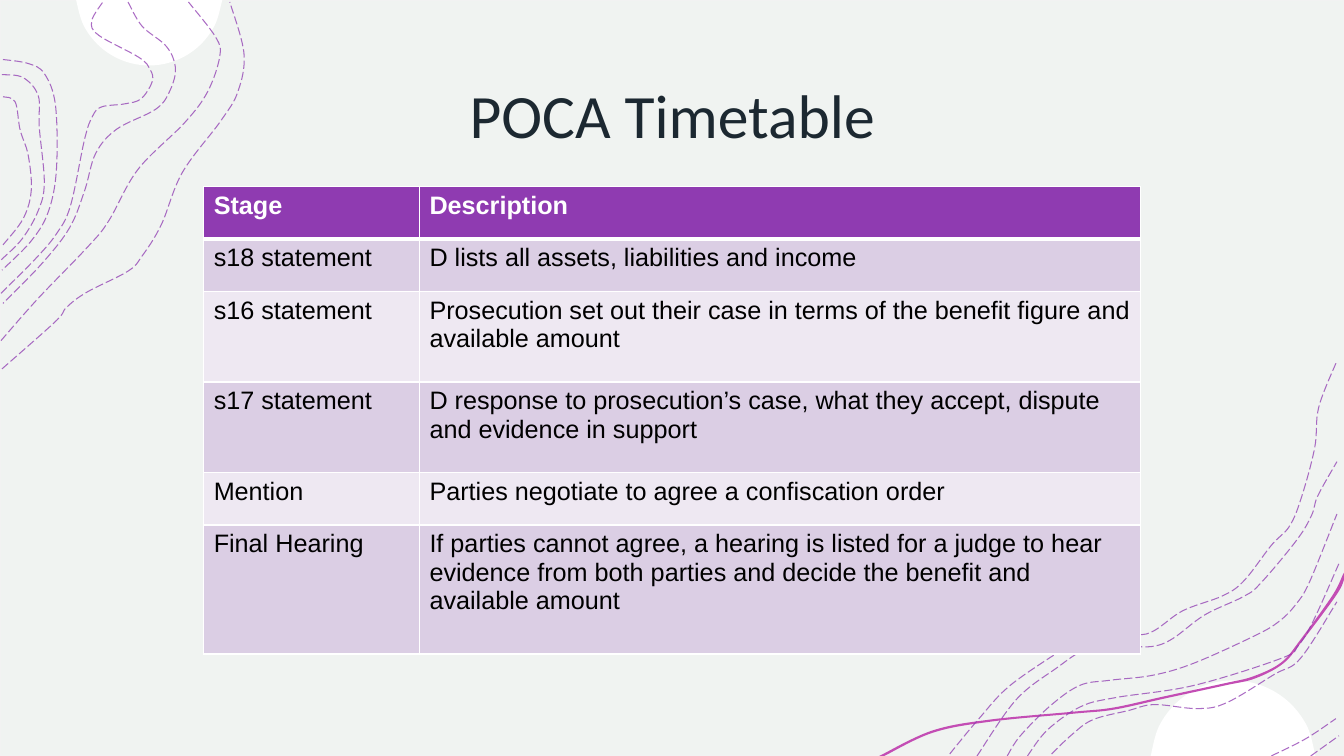
"""Build the POCA timetable slide: a stage table between contour-line corners."""
import math
from dataclasses import dataclass

import pptx
import pptx.dml.color
import pptx.enum.dml
import pptx.enum.shapes
import pptx.enum.text
import pptx.oxml
import pptx.oxml.ns
import pptx.util
from pptx.util import Inches

COLORS = {
    "backdrop": "F0F3F1", "backdrop_edge": "F2F2F2", "white": "FFFFFF",
    "purple": "8F3BB1", "ribbon": "C34DB4", "title": "1C2831",
    "text": "000000", "band_dark": "DBCEE4", "band_light": "EEE8F2",
}
SLIDE_WIDTH, SLIDE_HEIGHT = 13.33, 7.5
Point = tuple[float, float]


@dataclass(frozen=True)
class Disc:
    center: Point
    radius: float
    first_angle: float
    last_angle: float


@dataclass(frozen=True)
class Stage:
    name: str
    description: str
    height: float


DISCS = [Disc((1.48, -0.08), 0.73, 6, 174), Disc((12.23, 7.57), 0.82, 185, 355)]

RIBBON = [
    (8.72, 7.5), (9.24, 7.25), (9.81, 7.14), (10.65, 7.06), (11.04, 7.02), (11.54, 6.91),
    (12.14, 6.78), (12.43, 6.71), (12.71, 6.57), (12.91, 6.33), (13.22, 5.9), (13.33, 5.68),
    (13.33, 5.75), (13.25, 5.91), (12.93, 6.34), (12.73, 6.58), (12.45, 6.73), (12.15, 6.8),
    (11.55, 6.93), (11.05, 7.04), (10.65, 7.08), (9.82, 7.16), (9.25, 7.27), (8.77, 7.5)]

TOP_LEFT_CONTOURS = [
    [(0.02, 3.66), (0.55, 3.19), (0.66, 3.05), (0.86, 2.9), (1.27, 2.69), (1.41, 2.54),
     (1.6, 2.23), (1.81, 1.71), (2.19, 1.2), (2.36, 0.91), (2.42, 0.53), (2.28, 0.02)],
    [(0.01, 3.38), (0.38, 2.96), (0.88, 2.44), (1.08, 2.19), (1.37, 1.68), (1.83, 1.22),
     (2.06, 0.91), (2.18, 0.56), (2.14, 0.37), (1.87, 0.02)],
    [(1.27, 0.02), (1.41, 0.26), (1.65, 0.46), (1.74, 0.67), (1.69, 0.89), (1.55, 1.08),
     (1.16, 1.28), (0.95, 1.52), (0.84, 1.89), (0.69, 2.26), (0.42, 2.61), (0.03, 3.01)],
    [(0.01, 2.91), (0.35, 2.57), (0.56, 2.32), (0.7, 2.04), (0.84, 1.38), (0.92, 1.15),
     (1.01, 1.06), (1.24, 1.03), (1.4, 0.98), (1.51, 0.81), (1.49, 0.69), (1.38, 0.57),
     (0.98, 0.35), (0.91, 0.21), (1.02, 0.02)],
    [(0.03, 0.59), (0.28, 0.63), (0.44, 0.73), (0.55, 1.04), (0.56, 1.68), (0.48, 2.1),
     (0.31, 2.39), (0.02, 2.68)],
    [(0.02, 0.74), (0.23, 0.77), (0.38, 0.95), (0.39, 1.26), (0.44, 1.81), (0.38, 2.09),
     (0.22, 2.37), (0.01, 2.58)],
    [(0.03, 0.96), (0.15, 1.01), (0.2, 1.29), (0.28, 1.54), (0.31, 1.89), (0.23, 2.17),
     (0.03, 2.43)],
]
BOTTOM_RIGHT_CONTOURS = [
    [(9.42, 7.48), (9.71, 7.13), (10.02, 6.8), (10.56, 6.43), (10.78, 6.3), (10.98, 6.25),
     (11.37, 6.29), (11.73, 6.06), (12.13, 5.91), (12.34, 5.76), (12.61, 5.41),
     (12.79, 5.22), (12.91, 4.93), (13.04, 4.44), (13.08, 4.04), (13.26, 3.58)],
    [(9.69, 7.5), (10.08, 6.94), (10.49, 6.62), (10.75, 6.45), (11.03, 6.38), (11.22, 6.41),
     (11.45, 6.41), (11.64, 6.33), (11.95, 6.1), (12.33, 5.92), (12.5, 5.79), (12.86, 5.36),
     (13.01, 5.11), (13.07, 4.92), (13.26, 4.58)],
    [(13, 7.5), (13.28, 7.3)],
    [(12.61, 7.5), (12.95, 7.33), (13.25, 7.13)],
    [(10.43, 7.48), (10.63, 7.29), (10.84, 7.14), (11.19, 7.05), (11.45, 6.99),
     (11.88, 7.03), (12.17, 6.97), (12.64, 6.69), (12.9, 6.53), (13.26, 5.97)],
    [(10.19, 7.5), (10.39, 7.24), (10.72, 7.01), (11.07, 6.92), (11.84, 6.8),
     (12.71, 6.53), (12.88, 6.4), (13.03, 6.15), (13.28, 5.59)],
    [(9.99, 7.5), (10.12, 7.3), (10.42, 7), (10.71, 6.8), (11, 6.75), (11.43, 6.7),
     (11.84, 6.58), (12.44, 6.31), (12.68, 6.17), (12.85, 6), (12.99, 5.77), (13.26, 5.1)],
]

STAGES = [
    Stage("Stage", "Description", 0.52),
    Stage("s18 statement", "D lists all assets, liabilities and income", 0.52),
    Stage("s16 statement", "Prosecution set out their case in terms of the benefit figure "
          "and available amount", 0.9),
    Stage("s17 statement", "D response to prosecution’s case, what they accept, dispute "
          "and evidence in support", 0.9),
    Stage("Mention", "Parties negotiate to agree a confiscation order", 0.52),
    Stage("Final Hearing", "If parties cannot agree, a hearing is listed for a judge to hear "
          "evidence from both parties and decide the benefit and available amount", 1.28),
]


def rgb(name: str) -> pptx.dml.color.RGBColor:
    return pptx.dml.color.RGBColor.from_string(COLORS[name])


def round_corners(outline) -> None:
    points = [(int(pt.get("x")), int(pt.get("y")))
              for pt in outline._element.iter(pptx.oxml.ns.qn("a:pt"))]
    padded = [points[0], *points, points[-1]]
    segments = list(outline._element.iter(pptx.oxml.ns.qn("a:lnTo")))
    for segment, a, b, c, d in zip(segments, padded, padded[1:], padded[2:], padded[3:]):
        leaving = [b[i] + (c[i] - a[i]) // 6 for i in (0, 1)]
        arriving = [c[i] - (d[i] - b[i]) // 6 for i in (0, 1)]
        stops = "".join(f'<a:pt x="{x}" y="{y}"/>' for x, y in (leaving, arriving, c))
        segment.getparent().replace(segment, pptx.oxml.parse_xml(
            f'<a:cubicBezTo {pptx.oxml.ns.nsdecls("a")}>{stops}</a:cubicBezTo>'))


def draw_outline(shapes, anchors: list[Point], close: bool):
    corners = [(Inches(x), Inches(y)) for x, y in anchors]
    builder = shapes.build_freeform(*corners[0])
    builder.add_line_segments(corners[1:], close=close)
    outline = builder.convert_to_shape()
    outline.shadow.inherit = False
    round_corners(outline)
    return outline


def draw_filled(shapes, anchors: list[Point], color: str) -> None:
    area = draw_outline(shapes, anchors, True)
    area.fill.solid()
    area.fill.fore_color.rgb = rgb(color)
    area.line.fill.background()


def draw_disc(shapes, disc: Disc, steps: int = 8) -> None:
    turn = (disc.last_angle - disc.first_angle) / steps
    angles = [math.radians(disc.first_angle + turn * step) for step in range(steps + 1)]
    draw_filled(shapes, [(disc.center[0] + disc.radius * math.cos(angle),
                          disc.center[1] + disc.radius * math.sin(angle))
                         for angle in angles], "white")


def draw_contours(shapes, contours: list[list[Point]]) -> None:
    corner = shapes.add_group_shape()
    for anchors in contours:
        contour = draw_outline(corner.shapes, anchors, False)
        contour.fill.background()
        contour.line.color.rgb = rgb("purple")
        contour.line.width = pptx.util.Pt(0.75)
        contour.line.dash_style = pptx.enum.dml.MSO_LINE.LONG_DASH
        for tint in contour._element.xpath("./p:spPr/a:ln/a:solidFill/a:srgbClr"):
            tint.append(pptx.oxml.parse_xml(
                f'<a:alpha {pptx.oxml.ns.nsdecls("a")} val="75000"/>'))


def style_text(paragraph, size: float, font: str, color: str, bold: bool = False) -> None:
    paragraph.font.size = pptx.util.Pt(size)
    paragraph.font.name = font
    paragraph.font.bold = bold
    paragraph.font.color.rgb = rgb(color)


def set_borders(cell, widths: dict[str, int]) -> None:
    properties = cell._tc.get_or_add_tcPr()
    for side, width in widths.items():
        properties.append(pptx.oxml.parse_xml(
            f'<a:ln{side} {pptx.oxml.ns.nsdecls("a")} w="{pptx.util.Pt(width)}"><a:solidFill>'
            f'<a:srgbClr val="{COLORS["white"]}"/></a:solidFill></a:ln{side}>'))


def draw_timetable(shapes, stages: list[Stage]) -> None:
    timetable = shapes.add_table(len(stages), 2, Inches(2.02), Inches(1.85), Inches(9.29),
                                 Inches(sum(stage.height for stage in stages))).table
    for column, width in zip(timetable.columns, (2.14, 7.15)):
        column.width = Inches(width)
    for index, stage in enumerate(stages):
        timetable.rows[index].height = Inches(stage.height)
        header = index == 0
        band = "purple" if header else "band_dark" if index % 2 else "band_light"
        for cell, wording in zip(timetable.rows[index].cells, (stage.name, stage.description)):
            cell.text = wording
            style_text(cell.text_frame.paragraphs[0], 18, "Arial",
                       "white" if header else "text", header)
            set_borders(cell, {"L": 1, "R": 1, "T": 3 if index == 1 else 1,
                               "B": 3 if header else 1})
            cell.fill.solid()
            cell.fill.fore_color.rgb = rgb(band)


def main() -> None:
    deck = pptx.Presentation()
    deck.slide_width, deck.slide_height = Inches(SLIDE_WIDTH), Inches(SLIDE_HEIGHT)
    shapes = deck.slides.add_slide(deck.slide_layouts[6]).shapes

    backdrop = shapes.add_shape(pptx.enum.shapes.MSO_SHAPE.RECTANGLE, 0, 0,
                                deck.slide_width, deck.slide_height)
    backdrop.shadow.inherit = False
    backdrop.fill.solid()
    backdrop.fill.fore_color.rgb = rgb("backdrop")
    backdrop.line.color.rgb = rgb("backdrop_edge")
    backdrop.line.width = pptx.util.Pt(1)

    for disc in DISCS:
        draw_disc(shapes, disc)
    draw_filled(shapes, RIBBON, "ribbon")
    for contours in (TOP_LEFT_CONTOURS, BOTTOM_RIGHT_CONTOURS):
        draw_contours(shapes, contours)

    title = shapes.add_textbox(Inches(0.92), Inches(0.4), Inches(11.5), Inches(1.45)).text_frame
    title.word_wrap = True
    title.vertical_anchor = pptx.enum.text.MSO_ANCHOR.MIDDLE
    title.text = "POCA Timetable"
    title.paragraphs[0].alignment = pptx.enum.text.PP_ALIGN.CENTER
    style_text(title.paragraphs[0], 44, "Calibri", "title")

    draw_timetable(shapes, STAGES)
    deck.save("out.pptx")


if __name__ == "__main__":
    main()
